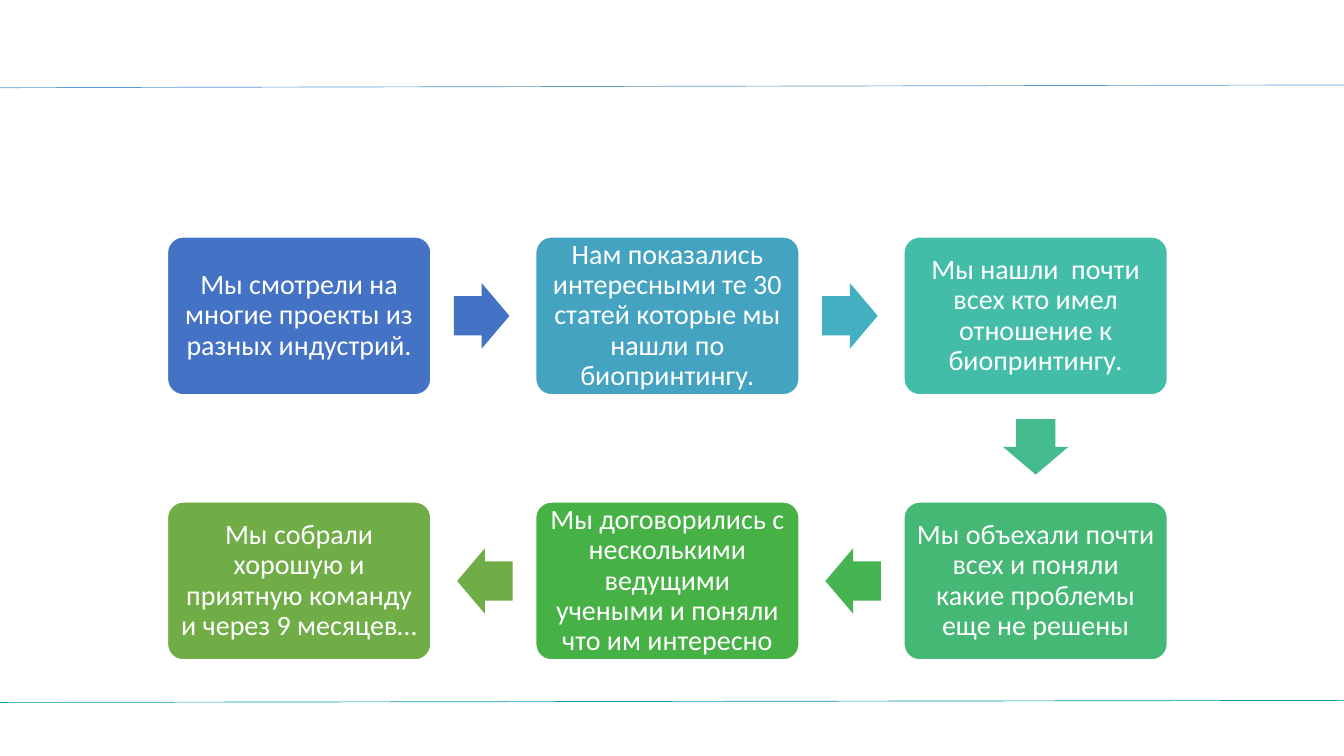
from lxml import etree
from pptx import Presentation
from pptx.dml.color import RGBColor
from pptx.enum.shapes import MSO_CONNECTOR, MSO_SHAPE
from pptx.enum.text import MSO_ANCHOR, PP_ALIGN
from pptx.oxml.ns import qn
from pptx.util import Cm, Pt

STRAIGHT = MSO_CONNECTOR.STRAIGHT
ROUNDED = MSO_SHAPE.ROUNDED_RECTANGLE
ARROW = MSO_SHAPE.RIGHT_ARROW
MIDDLE = MSO_ANCHOR.MIDDLE
CENTER = PP_ALIGN.CENTER

COLORS = {
    "white": "FFFFFF",
    "top rule": "5B9BD5",
    "bottom rule": "0097A9",
    "blue": "4472C4",
    "azure": "44A3C0",
    "cyan": "43AFC0",
    "turquoise": "43BDA7",
    "mint": "43BB8D",
    "emerald": "44B874",
    "grass": "45B451",
    "green": "46B246",
    "olive": "70AD47",
}

SLIDE_WIDTH, SLIDE_HEIGHT = 33.87, 19.05
STEP_WIDTH, STEP_HEIGHT = 6.64, 3.98
FIRST_LEFT, FIRST_TOP = 4.22, 5.97
COLUMN_PITCH, ROW_PITCH = 9.28, 6.68
ARROW_LENGTH, ARROW_BREADTH = 1.4, 1.65
ARROW_SETBACK = 0.04

# column, row, text, box colour, colour of the arrow to the next step
STEPS = [
    (0, 0, "Мы смотрели на многие проекты из разных индустрий.", "blue", "blue"),
    (1, 0, "Нам показались интересными те 30 статей которые мы нашли по биопринтингу.",
     "azure", "cyan"),
    (2, 0, "Мы нашли  почти всех кто имел отношение к биопринтингу.",
     "turquoise", "mint"),
    (2, 1, "Мы объехали почти всех и поняли какие проблемы еще не решены",
     "emerald", "grass"),
    (1, 1, "Мы договорились с несколькими ведущими учеными и поняли что им интересно",
     "green", "olive"),
    (0, 1, "Мы собрали хорошую и приятную команду и через 9 месяцев…", "olive", None),
]
# rotation of an arrow by its direction (right, down)
ROTATIONS = {(1, 0): 0, (0, 1): 90, (-1, 0): 180}


def color(name):
    return RGBColor.from_string(COLORS[name])


def add_rule(page, start_y, end_y, color_name):
    """Draw a thin, slightly slanted line across the whole slide."""
    rule = page.shapes.add_connector(
        STRAIGHT, Cm(0), Cm(start_y), Cm(SLIDE_WIDTH), Cm(end_y))
    rule.line.color.rgb = color(color_name)
    rule.line.width = Pt(0.48)
    properties = rule._element.find(qn("p:spPr"))
    etree.SubElement(properties, qn("a:effectLst"))


def add_filled_shape(page, kind, center, size, color_name):
    (x, y), (width, height) = center, size
    shape = page.shapes.add_shape(
        kind, Cm(x - width / 2), Cm(y - height / 2), Cm(width), Cm(height))
    shape.shadow.inherit = False
    shape.fill.solid()
    shape.fill.fore_color.rgb = color(color_name)
    return shape


def step_center(column, row):
    return (FIRST_LEFT + STEP_WIDTH / 2 + column * COLUMN_PITCH,
            FIRST_TOP + STEP_HEIGHT / 2 + row * ROW_PITCH)


def add_step(page, column, row, text, color_name):
    box = add_filled_shape(page, ROUNDED, step_center(column, row),
                           (STEP_WIDTH, STEP_HEIGHT), color_name)
    box.adjustments[0] = 0.1
    box.line.color.rgb = color("white")
    box.line.width = Pt(1)
    frame = box.text_frame
    frame.word_wrap = True
    frame.vertical_anchor = MIDDLE
    frame.margin_left = frame.margin_right = Cm(0.2)
    frame.margin_top = frame.margin_bottom = Cm(0.2)
    para = frame.paragraphs[0]
    para.alignment = CENTER
    para.line_spacing = 0.9
    span = para.add_run()
    span.text = text
    span.font.name = "Calibri"
    span.font.size = Pt(20)
    span.font.color.rgb = color("white")


def add_step_arrow(page, start, end, color_name):
    """Point from one grid cell to the next, just short of the gap's middle."""
    direction = (end[0] - start[0], end[1] - start[1])
    center = [(a + b) / 2 - ARROW_SETBACK * way
              for a, b, way in zip(step_center(*start), step_center(*end), direction)]
    arrow = add_filled_shape(page, ARROW, center,
                             (ARROW_LENGTH, ARROW_BREADTH), color_name)
    arrow.adjustments[0] = 0.6
    arrow.adjustments[1] = 0.5
    arrow.rotation = ROTATIONS[direction]
    arrow.line.fill.background()


def main():
    deck = Presentation()
    deck.slide_width = Cm(SLIDE_WIDTH)
    deck.slide_height = Cm(SLIDE_HEIGHT)
    page = deck.slides.add_slide(deck.slide_layouts[6])

    add_rule(page, 2.21, 2.14, "top rule")
    add_rule(page, 17.7, 17.65, "bottom rule")

    for column, row, text, box_color, _ in STEPS:
        add_step(page, column, row, text, box_color)
    for step, following in zip(STEPS, STEPS[1:]):
        add_step_arrow(page, step[:2], following[:2], step[4])

    deck.save("out.pptx")


if __name__ == "__main__":
    main()
